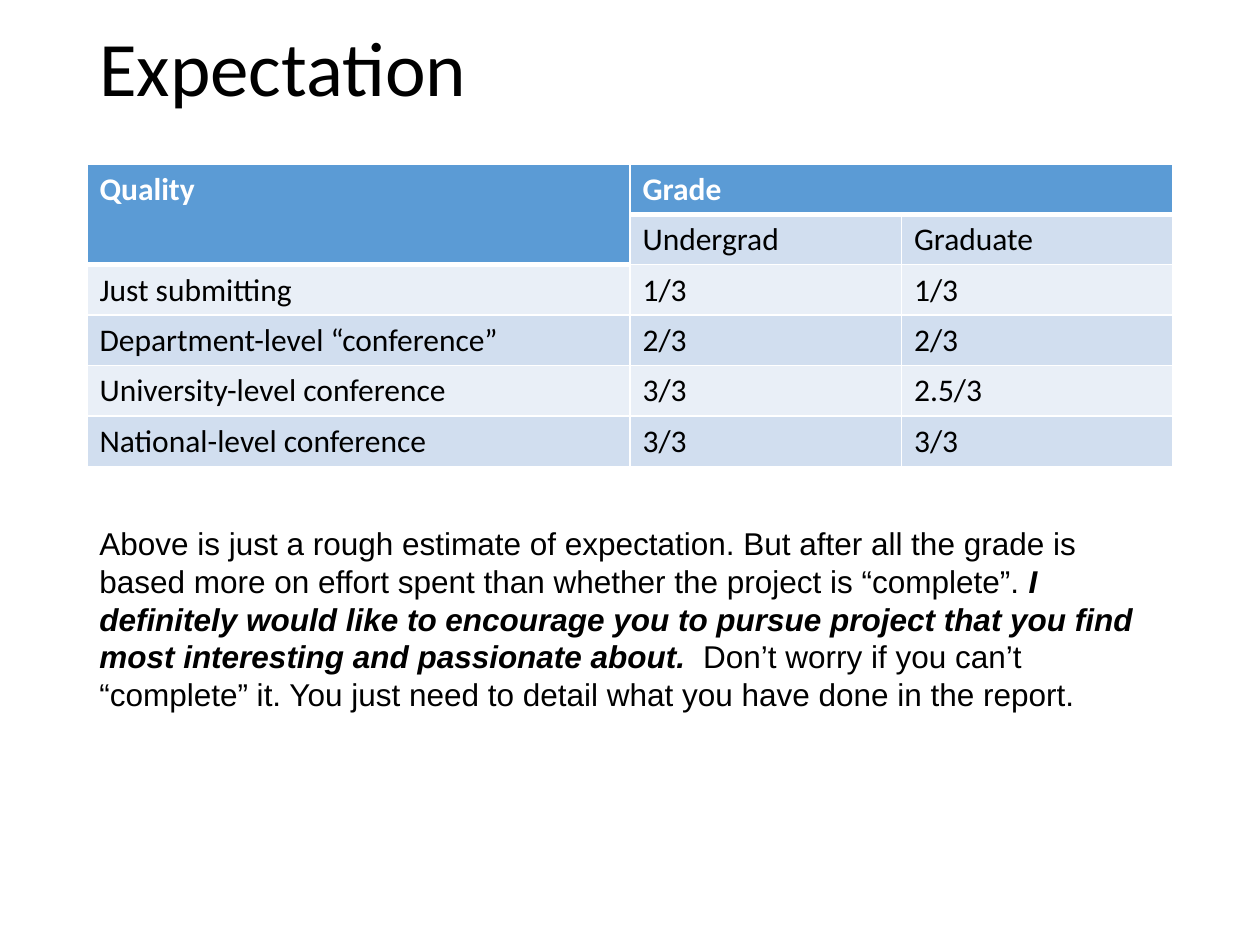
from dataclasses import dataclass

from lxml.etree import SubElement
from pptx import Presentation
from pptx.dml.color import RGBColor
from pptx.enum.text import MSO_ANCHOR as Anchor
from pptx.oxml.ns import qn
from pptx.util import Emu, Inches, Pt

WIDTH, HEIGHT = Inches(10), Inches(7.5)
LEFT, SPAN = 0.069, 0.862
BLACK, WHITE = "000000", "FFFFFF"
HEADER, BANDS = "5B9BD5", ("E9EFF7", "D1DEEF")
THIN, THICK = 0.96, 3
COLUMN_SHARES = (0.5, 0.25, 0.25)
ROW_HEIGHT = Inches(0.35)
ROWS = (
    ("Quality", "Grade", ""),
    ("", "Undergrad", "Graduate"),
    ("Just submitting", "1/3", "1/3"),
    ("Department-level “conference”", "2/3", "2/3"),
    ("University-level conference", "3/3", "2.5/3"),
    ("National-level conference", "3/3", "3/3"),
)


@dataclass(frozen=True)
class Span:
    text: str
    size: float = 18
    font: str = "Calibri"
    color: str = BLACK
    bold: bool = False
    italic: bool = False


@dataclass(frozen=True)
class TextBlock:
    top: float
    height: float
    spans: tuple[Span, ...]
    anchor: Anchor = Anchor.TOP
    line_spacing: float = 1.0


TITLE = TextBlock(0.001, 0.15, (Span("Expectation", size=44),), Anchor.MIDDLE, 0.9)
NOTE = TextBlock(0.548, 0.413, (
    Span("Above is just a rough estimate of expectation. But after all the grade is "
         "based more on effort spent than whether the project is “complete”. ", font="Arial"),
    Span("I definitely would like to encourage you to pursue project that you find "
         "most interesting and passionate about.  ", font="Arial", bold=True, italic=True),
    Span("Don’t worry if you can’t “complete” it. You just need to detail what you "
         "have done in the report.", font="Arial"),
))


def color_of(value: str) -> RGBColor:
    return RGBColor.from_string(value)


def add_span(para, span: Span) -> None:
    run = para.add_run()
    run.text = span.text
    font = run.font
    font.name, font.size = span.font, Pt(span.size)
    font.bold, font.italic = span.bold, span.italic
    font.color.rgb = color_of(span.color)


def add_text(page, block: TextBlock) -> None:
    box = page.shapes.add_textbox(
        Emu(int(WIDTH * LEFT)), Emu(int(HEIGHT * block.top)),
        Emu(int(WIDTH * SPAN)), Emu(int(HEIGHT * block.height)))
    frame = box.text_frame
    frame.word_wrap = True
    frame.vertical_anchor = block.anchor
    para = frame.paragraphs[0]
    para.line_spacing = block.line_spacing
    for span in block.spans:
        add_span(para, span)


def is_header(row: int, column: int) -> bool:
    return row == 0 or (row == 1 and column == 0)


def set_borders(cell, top: float, bottom: float) -> None:
    properties = cell._tc.get_or_add_tcPr()
    widths = {"a:lnL": THIN, "a:lnR": THIN, "a:lnT": top, "a:lnB": bottom}
    for index, (side, width) in enumerate(widths.items()):
        line = SubElement(properties, qn(side), w=str(int(Pt(width))))
        fill = SubElement(line, qn("a:solidFill"))
        SubElement(fill, qn("a:srgbClr"), val=WHITE)
        properties.insert(index, line)


def add_grades(page) -> None:
    table = page.shapes.add_table(
        len(ROWS), len(COLUMN_SHARES), Emu(int(WIDTH * LEFT)), Inches(1.3),
        Emu(int(WIDTH * SPAN)), ROW_HEIGHT * len(ROWS)).table
    for column, share in zip(table.columns, COLUMN_SHARES):
        column.width = Emu(int(WIDTH * SPAN * share))
    for r, texts in enumerate(ROWS):
        table.rows[r].height = ROW_HEIGHT
        for c, text in enumerate(texts):
            cell, header = table.cell(r, c), is_header(r, c)
            cell.fill.solid()
            cell.fill.fore_color.rgb = color_of(HEADER if header else BANDS[r % 2])
            below_header = not header and is_header(r - 1, c)
            set_borders(cell, THICK if below_header else THIN, THICK if header else THIN)
            if text:
                add_span(cell.text_frame.paragraphs[0],
                         Span(text, color=WHITE if header else BLACK, bold=header))
    table.cell(0, 0).merge(table.cell(1, 0))
    table.cell(0, 1).merge(table.cell(0, 2))


def main() -> None:
    deck = Presentation()
    deck.slide_width, deck.slide_height = WIDTH, HEIGHT
    page = deck.slides.add_slide(deck.slide_layouts[6])
    add_text(page, TITLE)
    add_grades(page)
    add_text(page, NOTE)
    deck.save("out.pptx")


if __name__ == "__main__":
    main()
